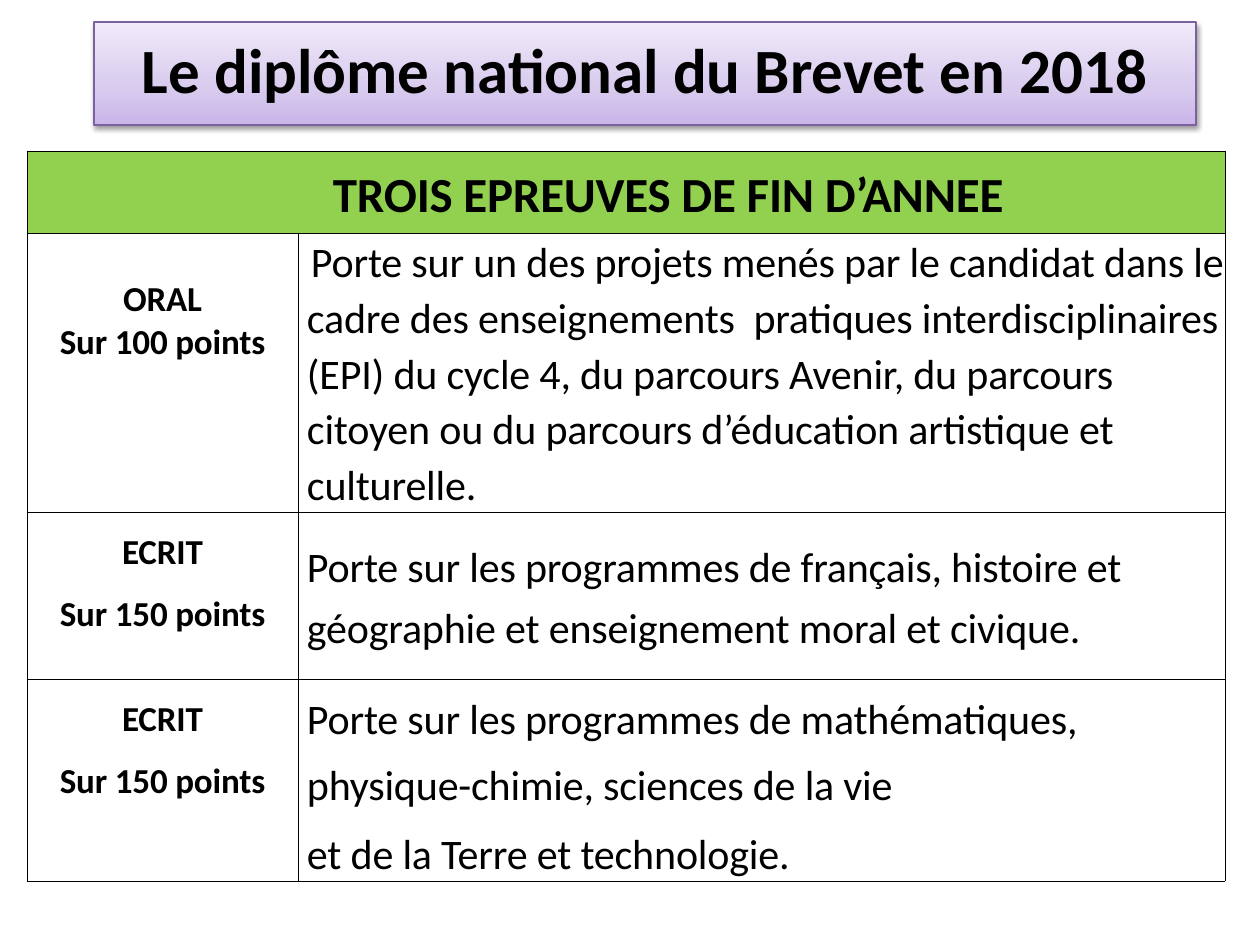
import pptx
import pptx.dml.color
import pptx.enum.text
import pptx.oxml
import pptx.oxml.ns
import pptx.util
from lxml import etree

SCALE = 914400 / 126
FONT = "Calibri"
CENTER = pptx.enum.text.PP_ALIGN.CENTER
LEFT = pptx.enum.text.PP_ALIGN.LEFT
COLUMNS = [271, 927]
ROWS = [82, 279, 167, 201]
QN = pptx.oxml.ns.qn


def px(length):
    return pptx.util.Emu(round(length * SCALE))


def color(value):
    return pptx.dml.color.RGBColor.from_string(value)


def add_color(parent, value):
    return etree.SubElement(parent, QN("a:srgbClr"), val=value)


def write_text(frame, lines, size=24, bold=False, align=LEFT, before=0,
               spacing=1.0, indent=0, tracking=-10):
    for index, line in enumerate(lines):
        para = frame.paragraphs[0] if index == 0 else frame.add_paragraph()
        para.alignment = align
        para.line_spacing = spacing
        para.space_before = pptx.util.Pt(before if index else 0)
        if indent:
            para._p.get_or_add_pPr().set("indent", str(px(indent)))
        span = para.add_run()
        span.text = line
        span.font.name = FONT
        span.font.size = pptx.util.Pt(size)
        span.font.bold = bold
        span.font.color.rgb = color("000000")
        span.font._element.set("spc", str(tracking))


def add_borders(cell):
    properties = cell._tc.get_or_add_tcPr()
    for side in ("a:lnL", "a:lnR", "a:lnT", "a:lnB"):
        line = etree.SubElement(properties, QN(side), w=str(pptx.util.Pt(0.48)))
        add_color(etree.SubElement(line, QN("a:solidFill")), "000000")


def write_cell(cell, lines, left=0, top=0, **text_format):
    cell.margin_left, cell.margin_top = px(left), px(top)
    cell.margin_right = cell.margin_bottom = 0
    write_text(cell.text_frame, lines, **text_format)


def add_gradient(properties, stops, angle):
    gradient = etree.Element(QN("a:gradFill"), rotWithShape="1")
    stop_list = etree.SubElement(gradient, QN("a:gsLst"))
    for position, value in stops:
        stop = etree.SubElement(stop_list, QN("a:gs"), pos=str(position * 1000))
        add_color(stop, value)
    etree.SubElement(gradient, QN("a:lin"), ang=str(angle * 60000), scaled="1")
    properties.find(QN("a:prstGeom")).addnext(gradient)


def add_shadow(properties, blur, distance, angle, opacity):
    effects = etree.SubElement(properties, QN("a:effectLst"))
    shadow = etree.SubElement(
        effects, QN("a:outerShdw"), blurRad=str(pptx.util.Pt(blur)),
        dist=str(pptx.util.Pt(distance)), dir=str(angle * 60000), rotWithShape="0")
    etree.SubElement(add_color(shadow, "000000"), QN("a:alpha"), val=str(opacity * 1000))


def format_title(page):
    title = page.shapes.title
    title.left, title.top, title.width, title.height = map(px, (94, 22, 1102, 103))
    properties = title._element.spPr
    etree.SubElement(properties, QN("a:prstGeom"), prst="rect")
    add_gradient(properties, [(0, "C9B5E8"), (35, "D8CBEE"), (100, "F0EAF9")], 270)
    title.line.color.rgb = color("7D60A0")
    title.line.width = pptx.util.Pt(0.75)
    add_shadow(properties, blur=3.1, distance=1.6, angle=90, opacity=38)
    title.text_frame.vertical_anchor = pptx.enum.text.MSO_ANCHOR.TOP
    title.text_frame.margin_top = px(9)
    write_text(title.text_frame, ["Le diplôme national du Brevet en 2018"],
               size=36, bold=True, align=CENTER, tracking=0)


def add_grid(page):
    frame = page.shapes.add_table(len(ROWS), len(COLUMNS), px(27), px(151),
                                  px(sum(COLUMNS)), px(sum(ROWS)))
    table = frame.table
    table.first_row = table.horz_banding = False
    for column, width in zip(table.columns, COLUMNS):
        column.width = px(width)
    for row, height in zip(table.rows, ROWS):
        row.height = px(height)
    for cell in table.iter_cells():
        add_borders(cell)
        cell.fill.background()
    return table


def fill_grid(table):
    header = table.cell(0, 0)
    header.merge(table.cell(0, 1))
    header.fill.solid()
    header.fill.fore_color.rgb = color("92D050")
    write_cell(header, ["TROIS EPREUVES DE FIN D’ANNEE"], left=306, top=15,
               size=28, bold=True)

    exams = [
        (["ORAL", "Sur 100 points"], {"top": 45},
         ["Porte sur un des projets menés par le candidat dans le cadre des "
          "enseignements  pratiques interdisciplinaires (EPI) du cycle 4, du "
          "parcours Avenir, du parcours  citoyen ou du parcours d’éducation "
          "artistique et culturelle."],
         {"spacing": 1.09, "indent": 4}),
        (["ECRIT", "Sur 150 points"], {"top": 19, "before": 10.9},
         ["Porte sur les programmes de français, histoire et géographie et "
          "enseignement moral et civique."],
         {"top": 20, "spacing": 1.2}),
        (["ECRIT", "Sur 150 points"], {"top": 19, "before": 10.8},
         ["Porte sur les programmes de mathématiques, physique-chimie, "
          "sciences de la vie", "et de la Terre et technologie."],
         {"spacing": 1.3, "before": 1.2}),
    ]
    for row, (label, label_format, content, content_format) in enumerate(exams, 1):
        write_cell(table.cell(row, 0), label, size=20, bold=True, align=CENTER,
                   **label_format)
        write_cell(table.cell(row, 1), content, left=9, **content_format)


def main():
    deck = pptx.Presentation()
    deck.slide_width, deck.slide_height = px(1260), px(945)
    page = deck.slides.add_slide(deck.slide_layouts[5])
    fill_grid(add_grid(page))
    format_title(page)
    deck.save("out.pptx")


if __name__ == "__main__":
    main()
